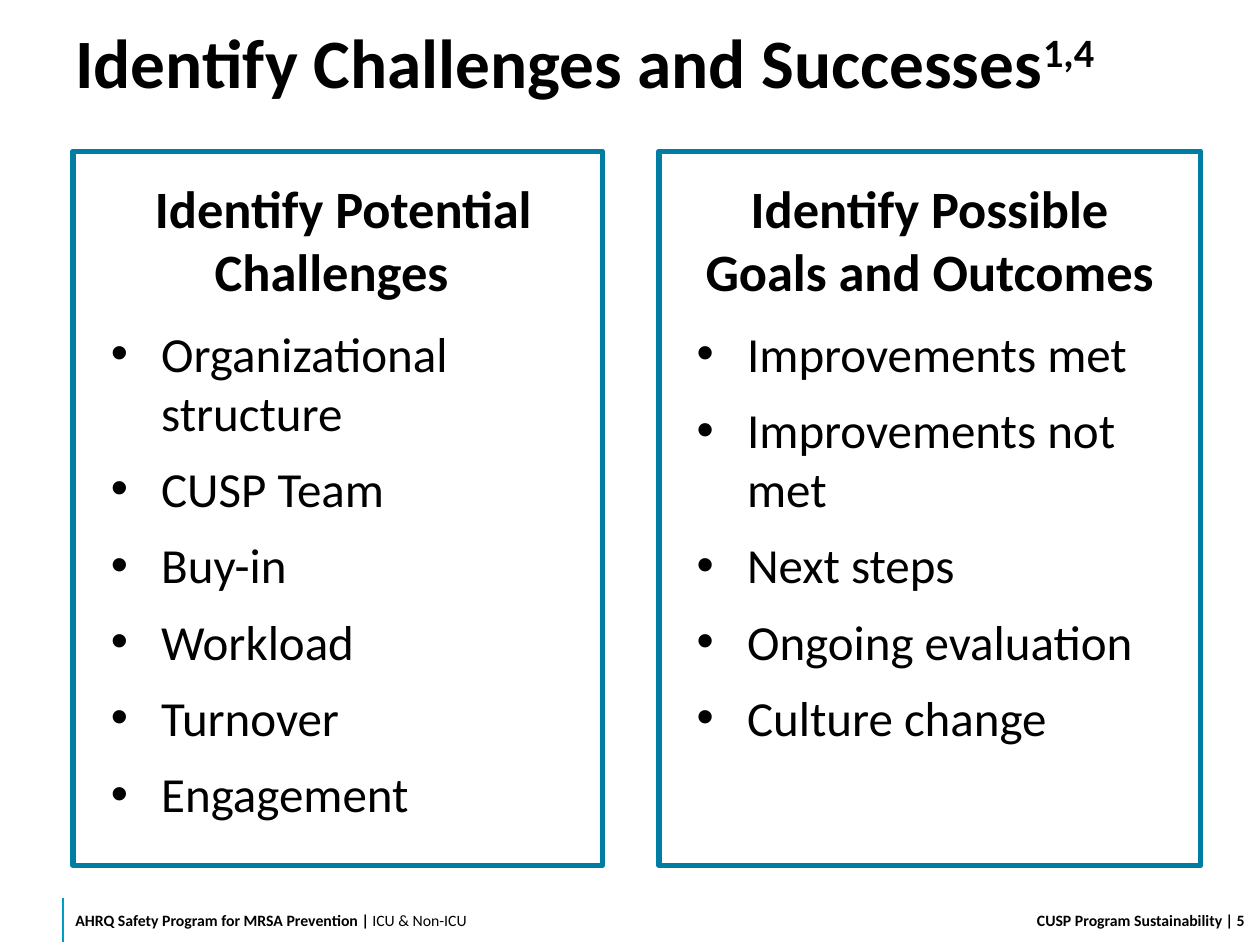
"""Build the "Identify Challenges and Successes" slide."""
from dataclasses import dataclass

from pptx import Presentation
from pptx import util as u
from pptx.dml.color import RGBColor
from pptx.enum import shapes, text
from pptx.oxml.ns import qn
from lxml import etree

BLACK = RGBColor(0x00, 0x00, 0x00)
TEAL = RGBColor(0x00, 0x7D, 0xA3)
CYAN = RGBColor(0x00, 0x9E, 0xC2)
FONT = "Calibri"
MIDDLE = text.MSO_ANCHOR.MIDDLE
LEFT, CENTER, RIGHT = text.PP_ALIGN.LEFT, text.PP_ALIGN.CENTER, text.PP_ALIGN.RIGHT


@dataclass(frozen=True)
class Run:
    text: str
    bold: bool = True
    baseline: int = 0


@dataclass(frozen=True)
class Label:
    box: tuple[float, float, float, float]
    insets: tuple[float, float, float, float]
    size: float
    runs: tuple[Run, ...]
    align: text.PP_ALIGN = LEFT
    spacing: float = 1.0


@dataclass(frozen=True)
class Panel:
    left: float
    width: float
    heading: str
    items: tuple[str, ...]


LABELS = (
    Label((0.5, 7.1, 4.1, 0.4), (0.1, 0, 0.1, 0), 9,
          (Run("AHRQ Safety Program for MRSA Prevention | "), Run("ICU & Non-ICU", bold=False))),
    Label((7.1, 7.1, 2.6, 0.4), (0.1, 0.05, 0, 0.05), 9,
          (Run("CUSP Program Sustainability"),), RIGHT),
    Label((9.7, 7.1, 0.3, 0.4), (0, 0.05, 0, 0.05), 9, (Run(" | 5"),)),
    Label((0.5, 0, 9, 1), (0.1, 0.1, 0.1, 0.05), 39.6,
          (Run("Identify Challenges and Successes"), Run("1,4", baseline=30000)), spacing=0.9),
)
PANELS = (
    Panel(0.58, 4.2, " Identify Potential Challenges ",
          ("Organizational structure", "CUSP Team", "Buy-in", "Workload", "Turnover", "Engagement")),
    Panel(5.23, 4.3, "Identify Possible Goals and Outcomes",
          ("Improvements met", "Improvements not met", "Next steps", "Ongoing evaluation",
           "Culture change")),
)


def set_attrs(obj, values: dict) -> None:
    for name, value in values.items():
        setattr(obj, name, value)


def set_frame(tf, insets: tuple, anchor) -> None:
    sides = ("margin_left", "margin_top", "margin_right", "margin_bottom")
    set_attrs(tf, {"word_wrap": True, "vertical_anchor": anchor,
                   **{side: u.Inches(n) for side, n in zip(sides, insets)}})


def add_run(p, run: Run, size: float) -> None:
    r = p.add_run()
    r.text = run.text
    set_attrs(r.font, {"name": FONT, "size": u.Pt(size), "bold": run.bold})
    r.font.color.rgb = BLACK
    if run.baseline:
        r._r.get_or_add_rPr().set("baseline", str(run.baseline))


def add_bullet(p) -> None:
    pPr = p._p.get_or_add_pPr()
    pPr.set("marL", str(u.Inches(0.4)))
    pPr.set("indent", str(u.Inches(-0.4)))
    etree.SubElement(pPr, qn("a:buFont")).set("typeface", "Arial")
    etree.SubElement(pPr, qn("a:buChar")).set("char", "•")


def add_label(s, label: Label) -> None:
    tf = s.shapes.add_textbox(*map(u.Inches, label.box)).text_frame
    set_frame(tf, label.insets, MIDDLE)
    p = tf.paragraphs[0]
    set_attrs(p, {"alignment": label.align, "line_spacing": label.spacing})
    for run in label.runs:
        add_run(p, run, label.size)


def add_panel(s, panel: Panel) -> None:
    box = map(u.Inches, (panel.left, 1.2, panel.width, 5.67))
    sp = s.shapes.add_shape(shapes.MSO_SHAPE.RECTANGLE, *box)
    sp.shadow.inherit = False
    sp.fill.background()
    sp.line.color.rgb = TEAL
    sp.line.width = u.Pt(3)
    tf = sp.text_frame
    set_frame(tf, (0.3, 0.2, 0.3, 0.2), text.MSO_ANCHOR.TOP)
    p = tf.paragraphs[0]
    p.alignment = CENTER
    add_run(p, Run(panel.heading), 30)
    for i, item in enumerate(panel.items):
        p = tf.add_paragraph()
        set_attrs(p, {"alignment": LEFT, "space_before": u.Pt(10 if i else 12)})
        add_bullet(p)
        add_run(p, Run(item, bold=False), 28)


def add_footer_rule(s) -> None:
    ends = map(u.Inches, (0.5, 7.13, 0.5, 7.48))
    rule = s.shapes.add_connector(shapes.MSO_CONNECTOR.STRAIGHT, *ends)
    rule.line.color.rgb = CYAN
    rule.line.width = u.Pt(1)
    etree.SubElement(rule._element.spPr, qn("a:effectLst"))


def main() -> None:
    prs = Presentation()
    set_attrs(prs, {"slide_width": u.Inches(10), "slide_height": u.Inches(7.5)})
    s = prs.slides.add_slide(prs.slide_layouts[6])
    add_footer_rule(s)
    for label in LABELS:
        add_label(s, label)
    for panel in PANELS:
        add_panel(s, panel)
    prs.save("out.pptx")


if __name__ == "__main__":
    main()
